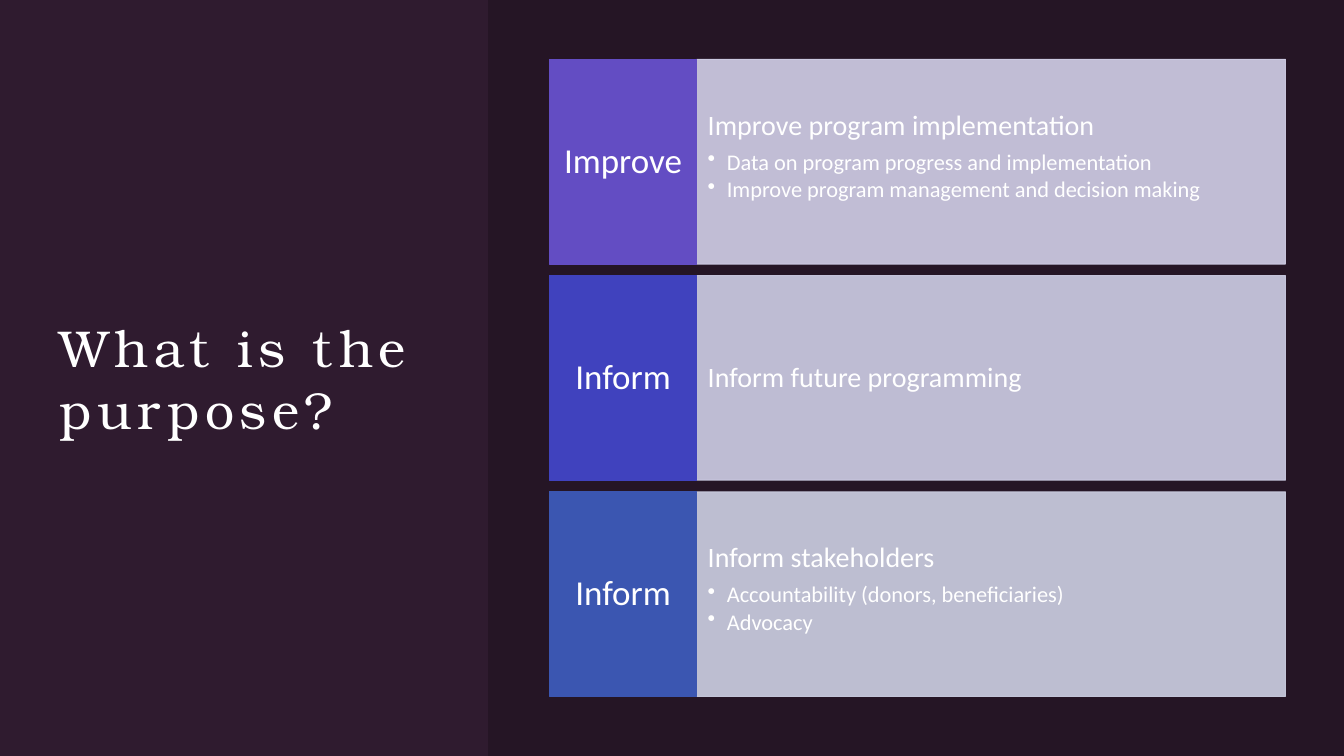
from dataclasses import dataclass

from lxml.etree import SubElement
from pptx import Presentation
from pptx.dml.color import RGBColor
from pptx.enum.shapes import MSO_SHAPE as Preset
from pptx.enum.text import MSO_ANCHOR as Anchor, MSO_AUTO_SIZE as AutoSize, PP_ALIGN as Align
from pptx.oxml.ns import qn
from pptx.shapes.autoshape import Shape
from pptx.slide import Slide
from pptx.text.text import TextFrame, _Paragraph as Paragraph
from pptx.util import Inches, Pt


@dataclass(frozen=True)
class Theme:
    background: str = "2F1B2F"
    shade: str = "000000"
    text: str = "FFFFFF"
    title_font: str = "TeX Gyre Bonum"
    body_font: str = "Calibri"
    title_size: int = 37
    label_size: int = 25
    heading_size: int = 20
    bullet_size: int = 16


@dataclass(frozen=True)
class Box:
    left: float
    top: float
    width: float
    height: float


@dataclass(frozen=True)
class Purpose:
    label: str
    heading: str
    bullets: tuple[str, ...]
    label_color: str
    panel_color: str


THEME = Theme()
SLIDE_WIDTH, SLIDE_HEIGHT = 13.33, 7.5
SHADE_LEFT = 4.84
ROWS_LEFT, ROWS_TOP = 5.45, 0.59
LABEL_WIDTH, PANEL_WIDTH = 1.46, 5.84
ROW_HEIGHT, ROW_PITCH = 2.03, 2.145
BULLET_INDENT = 0.19

PURPOSES = (
    Purpose(
        "Improve",
        "Improve program implementation",
        (
            "Data on program progress and implementation",
            "Improve program management and decision making",
        ),
        "634DC3",
        "D3D0E9",
    ),
    Purpose("Inform", "Inform future programming", (), "4042BE", "CFCFE7"),
    Purpose(
        "Inform",
        "Inform stakeholders",
        ("Accountability (donors, beneficiaries)", "Advocacy"),
        "3B56B1",
        "CED1E4",
    ),
)


def set_alpha(shape: Shape, percent: int) -> None:
    for color in shape._element.spPr.iter(qn("a:srgbClr")):
        SubElement(color, qn("a:alpha"), val=str(percent * 1000))


def add_rectangle(slide: Slide, box: Box, color: str, alpha: int = 100, outlined: bool = True) -> Shape:
    shape = slide.shapes.add_shape(
        Preset.RECTANGLE, Inches(box.left), Inches(box.top), Inches(box.width), Inches(box.height)
    )
    shape.shadow.inherit = False
    shape.fill.solid()
    shape.fill.fore_color.rgb = RGBColor.from_string(color)
    if outlined:
        shape.line.color.rgb = RGBColor.from_string(color)
        shape.line.width = Pt(0.75)
    else:
        shape.line.fill.background()
    if alpha < 100:
        set_alpha(shape, alpha)
    return shape


def set_frame(frame: TextFrame, anchor: Anchor, horizontal: float, vertical: float) -> None:
    frame.word_wrap = True
    frame.auto_size = AutoSize.NONE
    frame.vertical_anchor = anchor
    frame.margin_left = frame.margin_right = Inches(horizontal)
    frame.margin_top = frame.margin_bottom = Inches(vertical)


def write(paragraph: Paragraph, text: str, font: str, size: int, align: Align = Align.LEFT) -> None:
    paragraph.alignment = align
    run = paragraph.add_run()
    run.text = text
    run.font.name = font
    run.font.size = Pt(size)
    run.font.color.rgb = RGBColor.from_string(THEME.text)


def write_body(paragraph: Paragraph, text: str, size: int, after: float, align: Align = Align.LEFT) -> None:
    paragraph.line_spacing = 0.9
    paragraph.space_after = Pt(size * after)
    write(paragraph, text, THEME.body_font, size, align)


def add_bullet(paragraph: Paragraph, text: str) -> None:
    write_body(paragraph, text, THEME.bullet_size, 0.15)
    paragraph.level = 1
    properties = paragraph._p.get_or_add_pPr()
    properties.set("marL", str(Inches(BULLET_INDENT)))
    properties.set("indent", str(-Inches(BULLET_INDENT)))
    SubElement(properties, qn("a:buChar"), char="•")


def add_title(slide: Slide, text: str) -> None:
    title = slide.shapes.title
    title.left, title.top = Inches(0.59), Inches(1.18)
    title.width, title.height = Inches(3.82), Inches(5.13)
    set_frame(title.text_frame, Anchor.MIDDLE, 0, 0)
    paragraph = title.text_frame.paragraphs[0]
    write(paragraph, text, THEME.title_font, THEME.title_size)
    paragraph.runs[0]._r.get_or_add_rPr().set("spc", "400")


def add_purpose(slide: Slide, purpose: Purpose, top: float) -> None:
    panel_box = Box(ROWS_LEFT + LABEL_WIDTH, top, PANEL_WIDTH, ROW_HEIGHT)
    panel = add_rectangle(slide, panel_box, purpose.panel_color, alpha=90).text_frame
    set_frame(panel, Anchor.TOP if purpose.bullets else Anchor.MIDDLE, 0.11, 0.51)
    write_body(panel.paragraphs[0], purpose.heading, THEME.heading_size, 0.35)
    for bullet in purpose.bullets:
        add_bullet(panel.add_paragraph(), bullet)

    label_box = Box(ROWS_LEFT, top, LABEL_WIDTH, ROW_HEIGHT)
    label = add_rectangle(slide, label_box, purpose.label_color).text_frame
    set_frame(label, Anchor.MIDDLE, 0.08, 0.2)
    write_body(label.paragraphs[0], purpose.label, THEME.label_size, 0.35, Align.CENTER)


def main() -> None:
    presentation = Presentation()
    presentation.slide_width = Inches(SLIDE_WIDTH)
    presentation.slide_height = Inches(SLIDE_HEIGHT)
    slide = presentation.slides.add_slide(presentation.slide_layouts.get_by_name("Title Only"))
    slide.background.fill.solid()
    slide.background.fill.fore_color.rgb = RGBColor.from_string(THEME.background)

    add_title(slide, "What is the purpose?")
    shade_box = Box(SHADE_LEFT, 0, SLIDE_WIDTH - SHADE_LEFT, SLIDE_HEIGHT)
    add_rectangle(slide, shade_box, THEME.shade, alpha=20, outlined=False)
    for index, purpose in enumerate(PURPOSES):
        add_purpose(slide, purpose, ROWS_TOP + index * ROW_PITCH)
    presentation.save("out.pptx")


if __name__ == "__main__":
    main()
